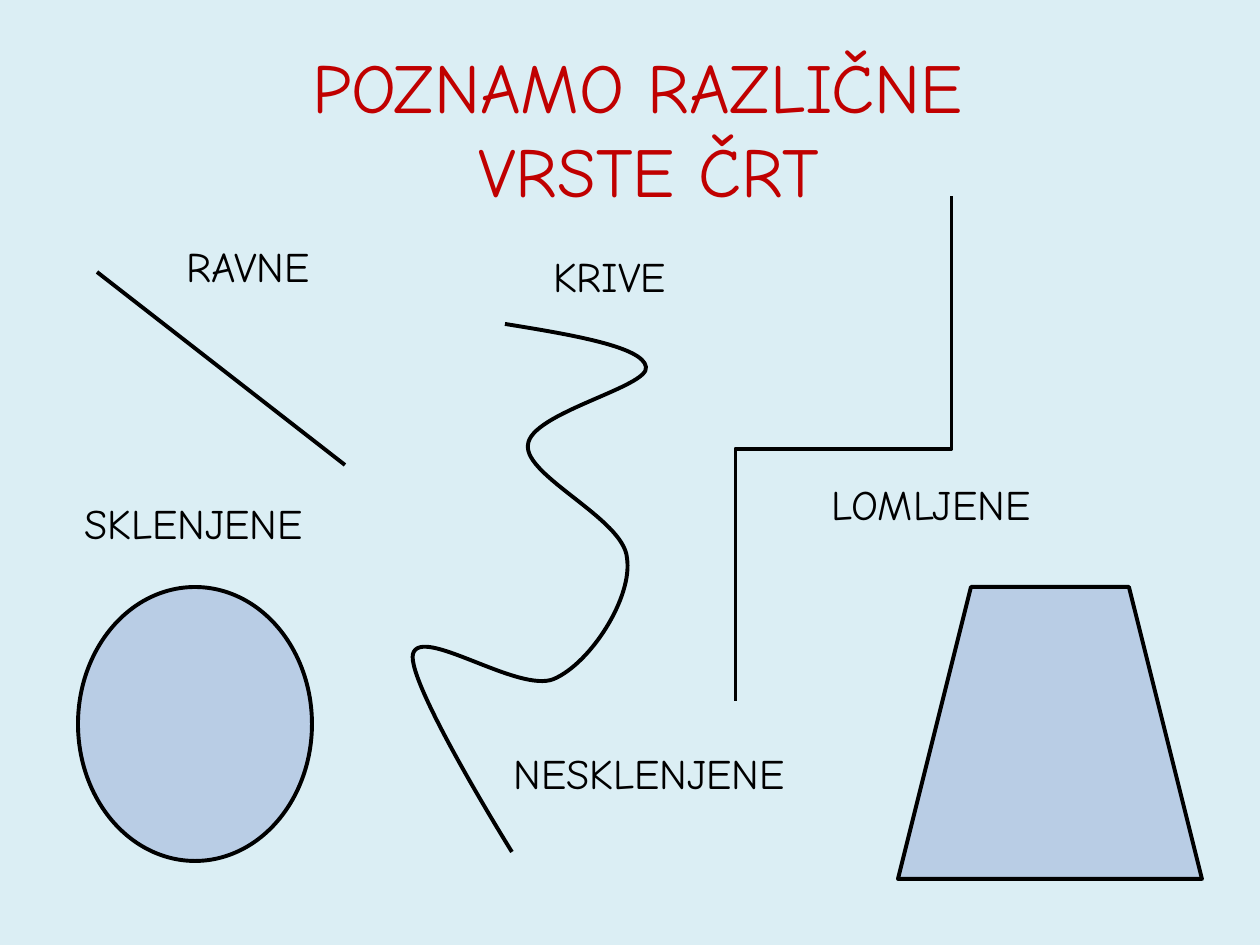
from dataclasses import dataclass

from lxml.etree import SubElement
from pptx import Presentation
from pptx.dml.color import RGBColor
from pptx.enum.shapes import MSO_CONNECTOR, MSO_SHAPE
from pptx.enum.text import MSO_AUTO_SIZE, PP_ALIGN
from pptx.oxml.ns import qn
from pptx.util import Emu, Inches, Pt

EMU_PER_PX = 914400 / 126


@dataclass(frozen=True)
class Theme:
    background: RGBColor = RGBColor(0xDB, 0xEE, 0xF4)
    shape_fill: RGBColor = RGBColor(0xB9, 0xCD, 0xE5)
    ink: RGBColor = RGBColor(0, 0, 0)
    title: RGBColor = RGBColor(0xC0, 0, 0)
    font: str = "Comic Neue"
    title_size: int = 40
    label_size: int = 24
    line_width: float = 2.25


@dataclass(frozen=True)
class Label:
    text: str
    left: int
    top: int
    width: int


@dataclass(frozen=True)
class ClosedShape:
    kind: MSO_SHAPE
    left: int
    top: int
    width: int
    height: int


@dataclass(frozen=True)
class Stroke:
    kind: MSO_CONNECTOR
    begin: tuple[int, int]
    end: tuple[int, int]
    rotation: int = 0


THEME = Theme()
TITLE = ("POZNAMO RAZLIČNE ", "VRSTE ČRT")
LABELS = (
    Label("RAVNE", 174, 234, 218),
    Label("KRIVE", 541, 244, 169),
    Label("LOMLJENE", 819, 472, 268),
    Label("SKLENJENE", 72, 491, 350),
    Label("NESKLENJENE", 501, 741, 343),
)
CLOSED_SHAPES = (
    ClosedShape(MSO_SHAPE.OVAL, 78, 587, 234, 274),
    ClosedShape(MSO_SHAPE.TRAPEZOID, 898, 587, 304, 292),
)
STRAIGHT = Stroke(MSO_CONNECTOR.STRAIGHT, (97, 272), (345, 465))
BROKEN = Stroke(MSO_CONNECTOR.ELBOW, (591, 341), (1096, 557), rotation=90)
# Start point, then two control points and an end point for each bend
CURVE = (
    (505, 324),
    (573, 335), (643, 347), (646, 367),
    (650, 387), (530, 413), (528, 445),
    (524, 476), (624, 519), (627, 558),
    (633, 597), (591, 663), (554, 679),
    (519, 694), (421, 625), (413, 654),
    (406, 682), (512, 852), (512, 852),
)


def px(length: int) -> Emu:
    return Emu(round(length * EMU_PER_PX))


def style_line(line) -> None:
    line.color.rgb = THEME.ink
    line.width = Pt(THEME.line_width)


def add_text_box(page, left: int, top: int, width: int, height: int):
    box = page.shapes.add_textbox(px(left), px(top), px(width), px(height))
    box.text_frame.word_wrap = True
    box.text_frame.auto_size = MSO_AUTO_SIZE.SHAPE_TO_FIT_TEXT
    return box.text_frame


def add_span(para, text: str, size: int, color: RGBColor) -> None:
    span = para.add_run()
    span.text = text
    span.font.name = THEME.font
    span.font.size = Pt(size)
    span.font.color.rgb = color


def add_title(page) -> None:
    frame = add_text_box(page, 0, 37, 1298, 183)
    for index, text in enumerate(TITLE):
        para = frame.add_paragraph() if index else frame.paragraphs[0]
        para.alignment = PP_ALIGN.CENTER
        # Hanging indent
        properties = para._p.get_or_add_pPr()
        properties.set("marL", str(Inches(0.75)))
        properties.set("indent", str(-Inches(0.75)))
        add_span(para, text, THEME.title_size, THEME.title)


def add_label(page, label: Label) -> None:
    frame = add_text_box(page, label.left, label.top, label.width, 63)
    add_span(frame.paragraphs[0], label.text, THEME.label_size, THEME.ink)


def add_stroke(page, stroke: Stroke) -> None:
    ends = (px(value) for value in stroke.begin + stroke.end)
    connector = page.shapes.add_connector(stroke.kind, *ends)
    style_line(connector.line)
    properties = connector.element.spPr
    SubElement(properties, qn("a:effectLst"))
    if stroke.rotation:
        properties.find(qn("a:xfrm")).set("rot", str(stroke.rotation * 60000))


def add_closed_shape(page, item: ClosedShape) -> None:
    shape = page.shapes.add_shape(
        item.kind, px(item.left), px(item.top), px(item.width), px(item.height)
    )
    shape.shadow.inherit = False
    shape.fill.solid()
    shape.fill.fore_color.rgb = THEME.shape_fill
    style_line(shape.line)


def add_curve(page, points: tuple[tuple[int, int], ...]) -> None:
    builder = page.shapes.build_freeform(*points[0], scale=EMU_PER_PX)
    builder.add_line_segments(points[1:], close=False)
    curve = builder.convert_to_shape()
    curve.shadow.inherit = False
    curve.fill.background()
    style_line(curve.line)
    # Join every three segments into one cubic bend
    outline = next(curve.element.iter(qn("a:path")))
    segments = outline.findall(qn("a:lnTo"))
    for start in range(0, len(segments), 3):
        bend = SubElement(outline, qn("a:cubicBezTo"))
        for segment in segments[start:start + 3]:
            bend.append(segment[0])
            outline.remove(segment)


def main() -> None:
    deck = Presentation()
    deck.slide_width, deck.slide_height = px(1260), px(945)
    page = deck.slides.add_slide(deck.slide_layouts[6])
    page.background.fill.solid()
    page.background.fill.fore_color.rgb = THEME.background

    # Title and the kinds of lines
    add_title(page)
    add_stroke(page, STRAIGHT)
    add_curve(page, CURVE)
    add_stroke(page, BROKEN)

    # Closed outlines and labels
    for item in CLOSED_SHAPES:
        add_closed_shape(page, item)
    for label in LABELS:
        add_label(page, label)

    deck.save("out.pptx")


if __name__ == "__main__":
    main()
